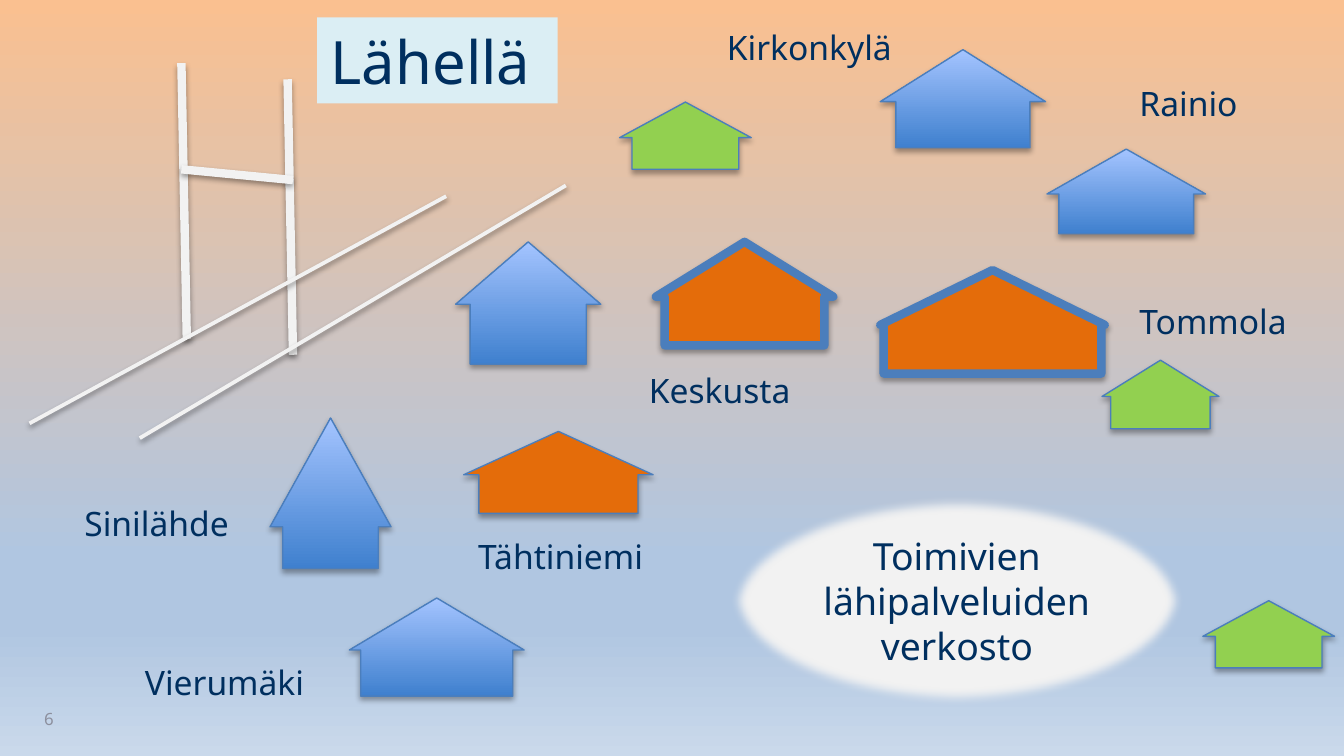
from copy import deepcopy

from lxml import etree
from pptx import Presentation
from pptx import util as u
from pptx.dml.color import RGBColor
from pptx.enum import shapes, text
from pptx.oxml.ns import qn

COLORS = {
    "navy": "002F5F", "grey": "8C8F9D", "title": "DBEEF4", "white": "F2F2F2",
    "outline": "4B7EBC", "orange": "E46C0A", "green": "92D050",
    "blue_dark": "3F80CE", "blue_light": "A4C4FF", "shadow": "000000",
    "peach": "FAC090", "sky": "B0C6E1", "pale_sky": "CAD9EB",
}
SKY = [(0, "peach"), (0.74, "sky"), (0.83, "sky"), (1, "pale_sky")]
FONT = "Noto Sans"

HOUSES = [
    ((2.01, 3.11, 0.9, 1.12), 0.79, 0.9, "blue", 0.75),
    ((3.39, 1.8, 1.08, 0.91), 0.8, 0.51, "blue", 0.75),
    ((3.45, 3.21, 1.41, 0.61), 0.84, 0.53, "orange", 0.75),
    ((2.6, 4.45, 1.3, 0.73), 0.87, 0.53, "blue", 0.75),
    ((6.55, 0.37, 1.23, 0.73), 0.81, 0.53, "blue", 0.75),
    ((7.79, 1.11, 1.18, 0.63), 0.85, 0.53, "blue", 0.75),
    ((4.88, 1.8, 1.32, 0.77), 0.9, 0.53, "orange", 4.5),
    ((6.55, 2.01, 1.67, 0.77), 0.97, 0.53, "orange", 4.5),
    ((8.95, 4.47, 0.98, 0.5), 0.81, 0.53, "green", 0.75),
    ((8.2, 2.68, 0.87, 0.51), 0.85, 0.53, "green", 0.75),
    ((4.61, 0.76, 0.98, 0.5), 0.81, 0.53, "green", 0.75),
]
PLACES = [
    ("Vierumäki", (0.98, 4.88, 1.43, 0.4)),
    ("Sinilähde", (0.53, 3.69, 1.34, 0.4)),
    ("Tähtiniemi", (3.46, 3.94, 1.5, 0.4)),
    ("Keskusta", (4.73, 2.7, 1.33, 0.4)),
    ("Rainio", (8.38, 0.57, 0.96, 0.4)),
    ("Kirkonkylä", (5.31, 0.15, 1.49, 0.4)),
    ("Tommola", (8.38, 2.19, 1.36, 0.4)),
]


def rgb(name):
    return RGBColor.from_string(COLORS[name])


def inches(box):
    return [u.Inches(value) for value in box]


def add_shadow(shape, opacity, distance):
    properties = shape._element.spPr
    effects = properties.find(qn("a:effectLst"))
    if effects is None:
        effects = etree.SubElement(properties, qn("a:effectLst"))
    shadow = etree.SubElement(
        effects, qn("a:outerShdw"), blurRad=str(u.Pt(3.1)),
        dist=str(u.Pt(distance)), dir="5400000", rotWithShape="0")
    color = etree.SubElement(shadow, qn("a:srgbClr"), val=COLORS["shadow"])
    etree.SubElement(color, qn("a:alpha"), val=str(opacity * 1000))


def write_text(shape, words, size, color="navy", align=text.PP_ALIGN.LEFT,
               anchor=text.MSO_ANCHOR.TOP, wrap=False):
    frame = shape.text_frame
    frame.word_wrap = wrap
    frame.auto_size = text.MSO_AUTO_SIZE.NONE
    frame.vertical_anchor = anchor
    paragraph = frame.paragraphs[0]
    paragraph.text = words
    paragraph.alignment = align
    paragraph.font.name = FONT
    paragraph.font.size = u.Pt(size)
    paragraph.font.color.rgb = rgb(color)


def paint_sky(slide):
    fill = slide.background.fill
    fill.gradient()
    fill.gradient_angle = 270
    stops = slide._element.find(".//" + qn("a:gsLst"))
    for _ in SKY[2:]:
        stops.append(deepcopy(stops[0]))
    for stop, (position, color) in zip(fill.gradient_stops, SKY):
        stop.position = position
        stop.color.rgb = rgb(color)


def place_title(slide, box):
    title = slide.shapes.title
    title.left, title.top, title.width, title.height = inches(box)
    title.fill.solid()
    title.fill.fore_color.rgb = rgb("title")
    write_text(title, "Lähellä", 32, anchor=text.MSO_ANCHOR.MIDDLE)


def add_house(slide, box, wall, roof, color, line_width):
    house = slide.shapes.add_shape(shapes.MSO_SHAPE.UP_ARROW, *inches(box))
    house.adjustments[0] = wall
    house.adjustments[1] = roof
    if color == "blue":
        house.fill.gradient()
        house.fill.gradient_angle = 90
        for stop, name in zip(house.fill.gradient_stops, ("blue_dark", "blue_light")):
            stop.color.rgb = rgb(name)
    else:
        house.fill.solid()
        house.fill.fore_color.rgb = rgb(color)
    house.line.color.rgb = rgb("outline")
    house.line.width = u.Pt(line_width)
    house.shadow.inherit = False
    add_shadow(house, 35, 1.8)


def add_bridge(slide, box):
    left, top, width, height = box
    right, bottom = left + width, top + height
    bars = [
        (left + 1.13, top, left + 1.17, top + 2.05, 4.5),
        (left + 1.92, top + 0.12, left + 1.96, top + 2.17, 4.5),
        (left + 1.13, top + 0.79, left + 1.96, top + 0.87, 4.5),
        (left, bottom - 0.11, left + 3.1, top + 0.99, 2),
        (left + 0.82, bottom, right, top + 0.91, 2),
    ]
    bridge = slide.shapes.add_group_shape()
    for *ends, line_width in bars:
        bar = bridge.shapes.add_connector(shapes.MSO_CONNECTOR.STRAIGHT, *inches(ends))
        bar.line.color.rgb = rgb("white")
        bar.line.width = u.Pt(line_width)
        add_shadow(bar, 38, 1.6)


def add_cloud(slide, box):
    cloud = slide.shapes.add_shape(shapes.MSO_SHAPE.OVAL, *inches(box))
    cloud.fill.solid()
    cloud.fill.fore_color.rgb = rgb("white")
    cloud.line.fill.background()
    cloud.shadow.inherit = False
    effects = cloud._element.spPr.find(qn("a:effectLst"))
    etree.SubElement(effects, qn("a:softEdge"), rad=str(u.Pt(5)))
    write_text(cloud, "Toimivien lähipalveluiden verkosto", 20,
               align=text.PP_ALIGN.CENTER, anchor=text.MSO_ANCHOR.MIDDLE, wrap=True)


def add_label(slide, words, box, size=18, color="navy", anchor=text.MSO_ANCHOR.TOP):
    label = slide.shapes.add_textbox(*inches(box))
    write_text(label, words, size, color, anchor=anchor)


def main():
    presentation = Presentation()
    presentation.slide_width = u.Inches(10)
    presentation.slide_height = presentation.slide_width * 9 // 16
    slide = presentation.slides.add_slide(presentation.slide_layouts[5])
    paint_sky(slide)
    place_title(slide, (2.36, 0.13, 1.79, 0.64))
    add_label(slide, "6", (0.23, 5.2, 0.56, 0.3), 9, "grey", text.MSO_ANCHOR.MIDDLE)
    add_bridge(slide, (0.22, 0.47, 3.99, 2.79))
    for house in HOUSES:
        add_house(slide, *house)
    add_cloud(slide, (5.43, 3.69, 3.38, 1.56))
    for words, box in PLACES:
        add_label(slide, words, box)
    presentation.save("out.pptx")


if __name__ == "__main__":
    main()
